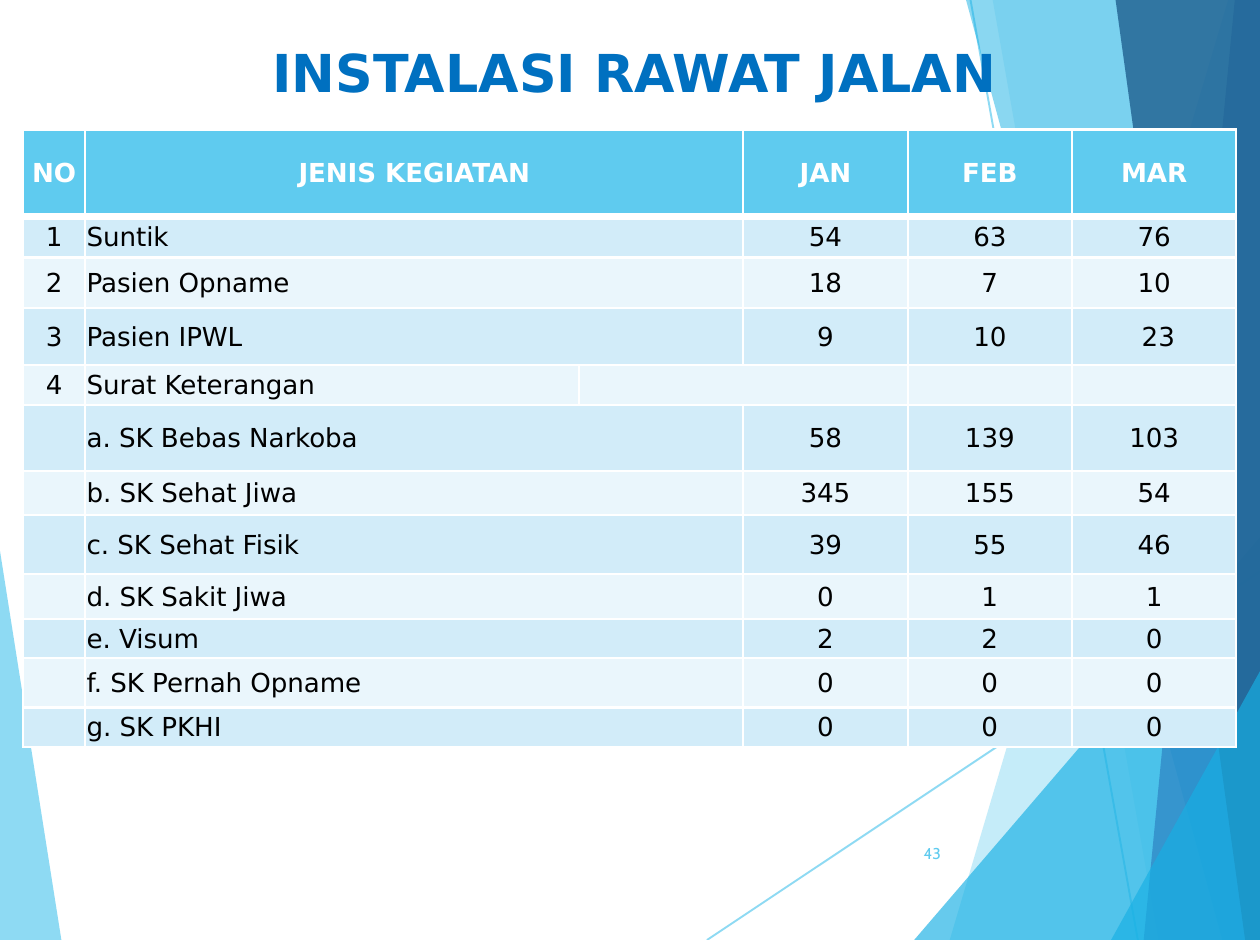
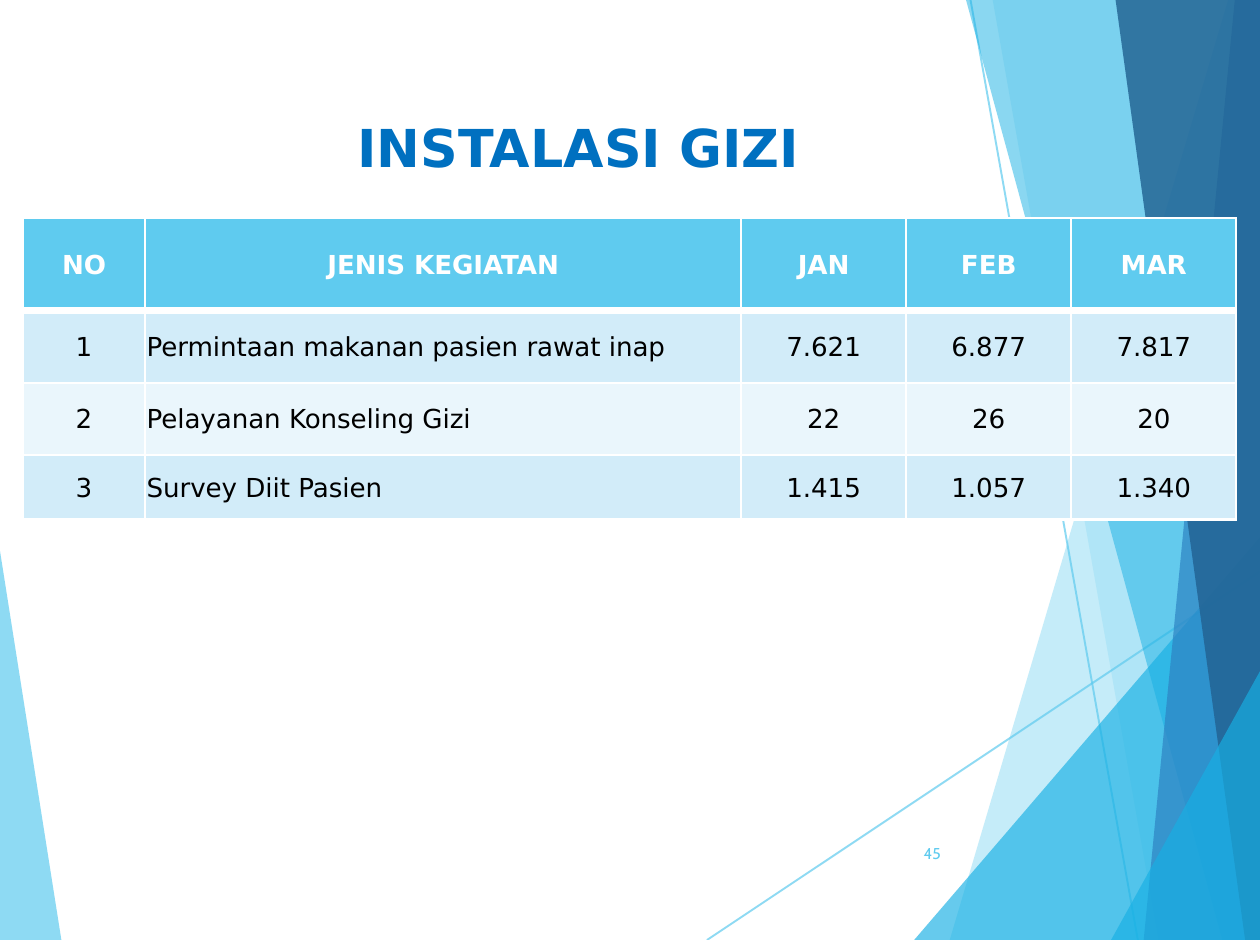
import dataclasses

import lxml.etree
import pptx
import pptx.dml.color
import pptx.enum.shapes
import pptx.enum.text
import pptx.oxml.ns
import pptx.util

Cm = pptx.util.Cm
Pt = pptx.util.Pt
qn = pptx.oxml.ns.qn
Align = pptx.enum.text.PP_ALIGN
Anchor = pptx.enum.text.MSO_ANCHOR


@dataclasses.dataclass(frozen=True)
class Theme:
    sky: str = "5FCBEF"
    cyan: str = "17B0E4"
    blue: str = "2E83C3"
    navy: str = "226292"
    title: str = "0070C0"
    odd_row: str = "D2ECF9"
    even_row: str = "EAF6FC"
    white: str = "FFFFFF"
    black: str = "000000"
    font: str = "DejaVu Sans"
    number_font: str = "Cabin"
    title_size: int = 20
    table_size: int = 10
    number_size: int = 6


THEME = Theme()
WIDTH, HEIGHT = 17.02, 12.7
TABLE_LEFT = 0.31

# Ribbons: left edge from start to end, colour, opacity; each runs to the right side
RIBBONS = [
    ((16.59, 0), (12.83, HEIGHT), THEME.sky, 36),
    ((13.41, 0), (15.65, HEIGHT), THEME.sky, 20),
    ((WIDTH, 7.26), (12.35, HEIGHT), THEME.cyan, 66),
    ((13.05, 0), (16.51, HEIGHT), THEME.cyan, 50),
    ((16.68, 0), (15.45, HEIGHT), THEME.blue, 70),
    ((15.07, 0), (16.82, HEIGHT), THEME.navy, 82),
    ((WIDTH, 9.07), (15.01, HEIGHT), THEME.cyan, 66),
]
RAYS = [((9.55, HEIGHT), (WIDTH, 7.72)), ((13.11, 0), (15.37, HEIGHT))]

HEADER = ("NO", "JENIS KEGIATAN", "JAN", "FEB", "MAR")
OUTPATIENT = [
    HEADER,
    ("1", "Suntik", "54", "63", "76"),
    ("2", "Pasien Opname", "18", "7", "10"),
    ("3", "Pasien IPWL", "9", "10", " 23"),
    ("4", "Surat Keterangan", "", "", ""),
    ("", "a. SK Bebas Narkoba", "58", "139", "103"),
    ("", "b. SK Sehat Jiwa", "345", "155", "54"),
    ("", "c. SK Sehat Fisik", "39", "55", "46"),
    ("", "d. SK Sakit Jiwa", "0", "1", "1"),
    ("", "e. Visum", "2", "2", "0"),
    ("", "f. SK Pernah Opname", "0", "0", "0"),
    ("", "g. SK PKHI", "0", "0", "0"),
]
NUTRITION = [
    HEADER,
    ("1", "Permintaan makanan pasien rawat inap", "7.621", "6.877", "7.817"),
    ("2", "Pelayanan Konseling Gizi", "22", "26", "20"),
    ("3", "Survey Diit Pasien", "1.415", "1.057", "1.340"),
]


def rgb(color):
    return pptx.dml.color.RGBColor.from_string(color)


def style_paragraph(para, size, color, bold=False, align=Align.CENTER, font=THEME.font):
    para.alignment = align
    para.font.name = font
    para.font.size = Pt(size)
    para.font.bold = bold
    para.font.color.rgb = rgb(color)


def set_opacity(shape, percent):
    for color in shape.element.iter(qn("a:srgbClr")):
        lxml.etree.SubElement(color, qn("a:alpha"), val=str(percent * 1000))


# Backdrop
def add_polygon(shapes, points, color, opacity):
    corners = [(Cm(x), Cm(y)) for x, y in points]
    builder = shapes.build_freeform(*corners[0], scale=1.0)
    builder.add_line_segments(corners[1:], close=True)
    polygon = builder.convert_to_shape()
    polygon.shadow.inherit = False
    polygon.fill.solid()
    polygon.fill.fore_color.rgb = rgb(color)
    polygon.line.fill.background()
    set_opacity(polygon, opacity)


def add_ray(shapes, start, end):
    ray = shapes.add_connector(
        pptx.enum.shapes.MSO_CONNECTOR.STRAIGHT, *map(Cm, start + end))
    ray.line.color.rgb = rgb(THEME.sky)
    ray.line.width = Pt(0.75)
    set_opacity(ray, 70)
    lxml.etree.SubElement(ray.element.spPr, qn("a:effectLst"))


def add_backdrop(page):
    shapes = page.shapes.add_group_shape().shapes
    add_polygon(shapes, [(0, 7.44), (0.83, HEIGHT), (0, HEIGHT)], THEME.sky, 70)
    for start, end in RAYS:
        add_ray(shapes, start, end)
    for start, end, color, opacity in RIBBONS:
        points = [start, end, (WIDTH, end[1]), (WIDTH, start[1])]
        add_polygon(shapes, points, color, opacity)


# Title and page number
def set_title(page, text, box, margin_top):
    title = page.shapes.title
    title.left, title.top, title.width, title.height = map(Cm, box)
    frame = title.text_frame
    frame.text = text
    frame.word_wrap = True
    frame.auto_size = pptx.enum.text.MSO_AUTO_SIZE.NONE
    frame.vertical_anchor = Anchor.TOP
    frame.margin_top = Cm(margin_top)
    style_paragraph(frame.paragraphs[0], THEME.title_size, THEME.title, bold=True)
    page.shapes.element.append(title.element)  # in front of the backdrop


def add_page_number(page, number):
    box = page.shapes.add_textbox(Cm(11.99), Cm(11.18), Cm(0.97), Cm(0.69))
    frame = box.text_frame
    frame.word_wrap = True
    frame.vertical_anchor = Anchor.MIDDLE
    frame.text = str(number)
    style_paragraph(frame.paragraphs[0], THEME.number_size, THEME.sky,
                    align=Align.RIGHT, font=THEME.number_font)


# Table
def set_borders(cell, row):
    widths = {"L": 1, "R": 1, "T": 3 if row == 1 else 1, "B": 3 if row == 0 else 1}
    properties = cell._tc.get_or_add_tcPr()
    for side, width in widths.items():
        line = lxml.etree.SubElement(properties, qn(f"a:ln{side}"), w=str(Pt(width)))
        fill = lxml.etree.SubElement(line, qn("a:solidFill"))
        lxml.etree.SubElement(fill, qn("a:srgbClr"), val=THEME.white)


def format_cell(cell, row, column):
    set_borders(cell, row)
    cell.fill.solid()
    bands = (THEME.even_row, THEME.odd_row)
    cell.fill.fore_color.rgb = rgb(bands[row % 2] if row else THEME.sky)
    cell.vertical_anchor = Anchor.MIDDLE
    cell.margin_left = cell.margin_right = cell.margin_top = Cm(0.02)
    cell.margin_bottom = 0
    para = cell.text_frame.paragraphs[0]
    style_paragraph(para, THEME.table_size, THEME.black if row else THEME.white,
                    bold=row == 0,
                    align=Align.LEFT if row and column == 1 else Align.CENTER)
    if not cell.text:  # keeps empty cells from stretching their row
        lxml.etree.SubElement(para._p, qn("a:endParaRPr"), sz=str(THEME.table_size * 100))


def add_activity_table(page, top, widths, heights, records, covered=None):
    """covered gives, for a record, the column merged into the one before it."""
    frame = page.shapes.add_table(len(heights), len(widths), Cm(TABLE_LEFT), Cm(top),
                                  Cm(sum(widths)), Cm(sum(heights)))
    table = frame.table
    for column, width in zip(table.columns, widths):
        column.width = Cm(width)
    for row, (height, record) in enumerate(zip(heights, records)):
        table.rows[row].height = Cm(height)
        hidden = covered(record) if covered else None
        visible = [column for column in range(len(widths)) if column != hidden]
        for column, text in zip(visible, record):
            table.cell(row, column).text = text
        for column in range(len(widths)):
            format_cell(table.cell(row, column), row, column)
        if hidden is not None:
            table.cell(row, hidden - 1).merge(table.cell(row, hidden))


def add_page(deck, title, title_box, margin_top):
    page = deck.slides.add_slide(deck.slide_layouts[5])
    add_backdrop(page)
    set_title(page, title, title_box, margin_top)
    return page


def main():
    deck = pptx.Presentation()
    deck.slide_width, deck.slide_height = Cm(WIDTH), Cm(HEIGHT)

    # Outpatient unit
    page = add_page(deck, "INSTALASI RAWAT JALAN", (0.91, 0.36, 15.32, 1.96), 0.18)
    add_activity_table(
        page, 1.75, [0.84, 6.67] + [2.22] * 4,
        [1.18, 0.55, 0.68, 0.77, 0.54, 0.89, 0.6, 0.8, 0.6, 0.53, 0.67, 0.53],
        OUTPATIENT, covered=lambda record: 2 if record[2] else 3)
    add_page_number(page, 43)

    # Nutrition unit
    page = add_page(deck, "INSTALASI GIZI", (1.91, 0.56, 11.81, 2.44), 1)
    add_activity_table(page, 2.95, [1.65, 8.05] + [2.23] * 3,
                       [1.25, 0.97, 0.98, 0.87], NUTRITION)
    add_page_number(page, 45)

    deck.save("out.pptx")


if __name__ == "__main__":
    main()
